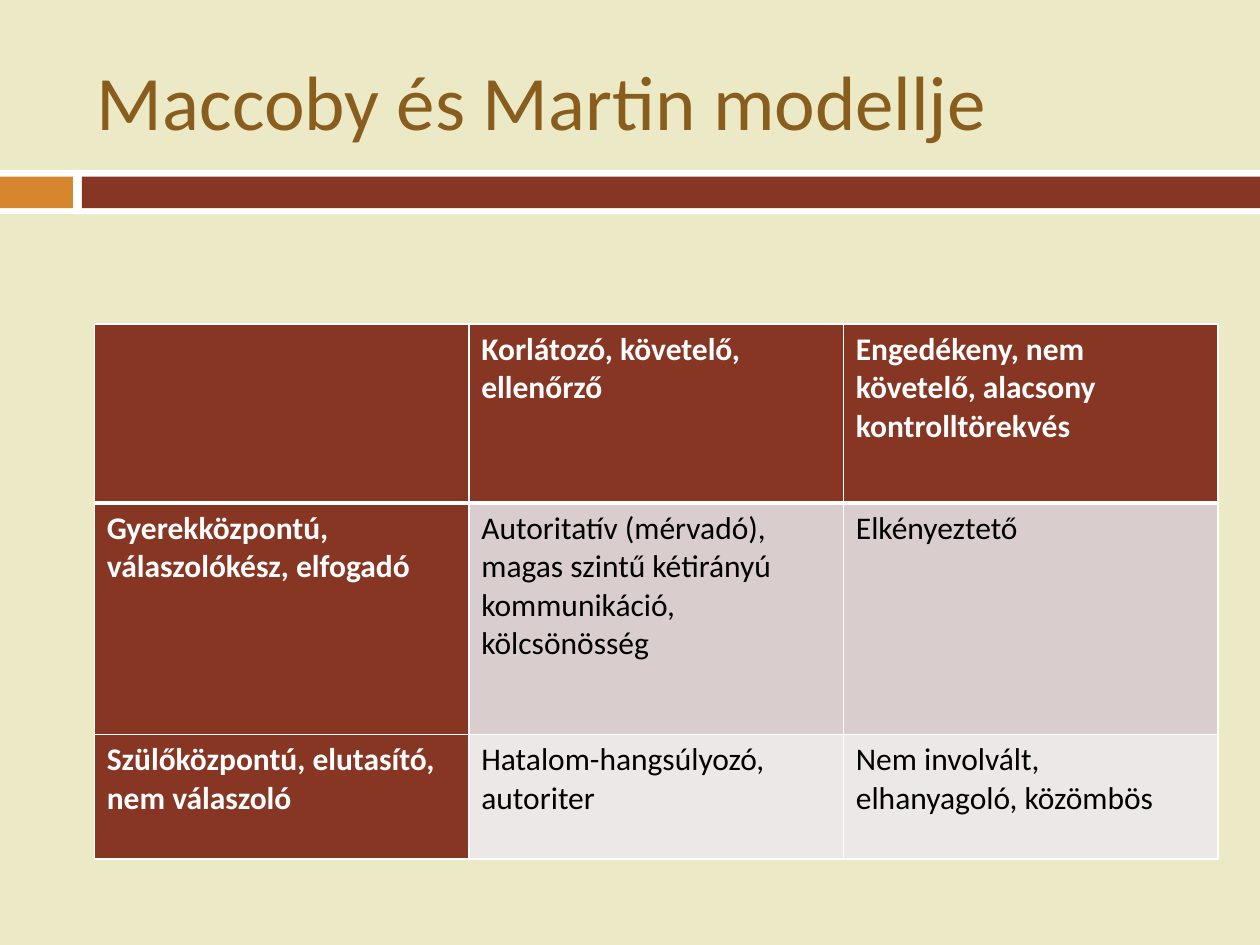
import pptx
import pptx.util
import pptx.dml.color
import pptx.enum.shapes
import pptx.enum.text
from dataclasses import dataclass
from lxml import etree

Cm, Pt = pptx.util.Cm, pptx.util.Pt
RGB = pptx.dml.color.RGBColor.from_string


@dataclass(frozen=True)
class Theme:
    font: str = "Calibri"
    title_size: int = 44
    cell_size: int = 18
    background: str = "ECE9C6"
    title: str = "895D1D"
    orange: str = "D6862D"
    brown: str = "873624"
    white: str = "FFFFFF"
    black: str = "000000"
    row_fills: tuple = ("D9CECD", "EDE8E8")


THEME = Theme()

TITLE = "Maccoby és Martin modellje"
TABLE = [
    ["", "Korlátozó, követelő, ellenőrző",
     "Engedékeny, nem követelő, alacsony kontrolltörekvés"],
    ["Gyerekközpontú, válaszolókész, elfogadó",
     "Autoritatív (mérvadó), magas szintű kétirányú kommunikáció, kölcsönösség",
     "Elkényeztető"],
    ["Szülőközpontú, elutasító, nem válaszoló",
     "Hatalom-hangsúlyozó, autoriter",
     "Nem involvált, elhanyagoló, közömbös"],
]

# left, top, width, height in cm
TITLE_BOX = (1.7, 0.64, 22.66, 2.74)
BANDS = [
    ((0, 3.43, 25.4, 0.89), THEME.white),
    ((0, 3.56, 1.47, 0.64), THEME.orange),
    ((1.65, 3.56, 23.75, 0.64), THEME.brown),
]
TABLE_LEFT, TABLE_TOP, COL_WIDTH = 1.9, 6.53, 7.55
ROW_HEIGHTS = [3.61, 4.67, 2.51]


def style_run(r, size, color, bold=False):
    r.font.name = THEME.font
    r.font.size = Pt(size)
    r.font.bold = bold
    r.font.color.rgb = RGB(color)


def add_bands(s):
    for box, color in BANDS:
        sp = s.shapes.add_shape(pptx.enum.shapes.MSO_SHAPE.RECTANGLE, *map(Cm, box))
        sp.shadow.inherit = False
        sp.fill.solid()
        sp.fill.fore_color.rgb = RGB(color)
        sp.line.fill.background()


def add_title(s):
    sp = s.shapes.title
    sp.left, sp.top, sp.width, sp.height = map(Cm, TITLE_BOX)
    tf = sp.text_frame
    tf.text = TITLE
    tf.word_wrap = True
    tf.vertical_anchor = pptx.enum.text.MSO_ANCHOR.MIDDLE
    p = tf.paragraphs[0]
    p.alignment = pptx.enum.text.PP_ALIGN.LEFT
    style_run(p.runs[0], THEME.title_size, THEME.title)


def set_borders(cell, widths):
    """Draw white borders; widths maps L, R, T, B (in that order) to points."""
    tc_pr = cell._tc.get_or_add_tcPr()
    ns = "{http://schemas.openxmlformats.org/drawingml/2006/main}"
    for side, width in widths.items():
        ln = etree.SubElement(tc_pr, f"{ns}ln{side}", w=str(Pt(width)))
        fill = etree.SubElement(ln, f"{ns}solidFill")
        etree.SubElement(fill, f"{ns}srgbClr", val=THEME.white)


def add_model_table(s):
    rows, cols = len(TABLE), len(TABLE[0])
    frame = s.shapes.add_table(rows, cols, Cm(TABLE_LEFT), Cm(TABLE_TOP),
                               Cm(COL_WIDTH * cols), Cm(sum(ROW_HEIGHTS)))
    table = frame.table
    for column in table.columns:
        column.width = Cm(COL_WIDTH)
    for i, height in enumerate(ROW_HEIGHTS):
        table.rows[i].height = Cm(height)
        for j, text in enumerate(TABLE[i]):
            cell = table.cell(i, j)
            heading = i == 0 or j == 0
            set_borders(cell, {"L": 1, "R": 1, "T": 3 if i == 1 else 1,
                               "B": 3 if i == 0 else 1})
            cell.fill.solid()
            cell.fill.fore_color.rgb = RGB(
                THEME.brown if heading else THEME.row_fills[i - 1])
            cell.text_frame.text = text
            for r in cell.text_frame.paragraphs[0].runs:
                style_run(r, THEME.cell_size,
                          THEME.white if heading else THEME.black, heading)


def main():
    prs = pptx.Presentation()
    prs.slide_width, prs.slide_height = Cm(25.4), Cm(19.05)
    s = prs.slides.add_slide(prs.slide_layouts[5])
    s.background.fill.solid()
    s.background.fill.fore_color.rgb = RGB(THEME.background)
    add_bands(s)
    add_title(s)
    add_model_table(s)
    prs.save("out.pptx")


if __name__ == "__main__":
    main()
